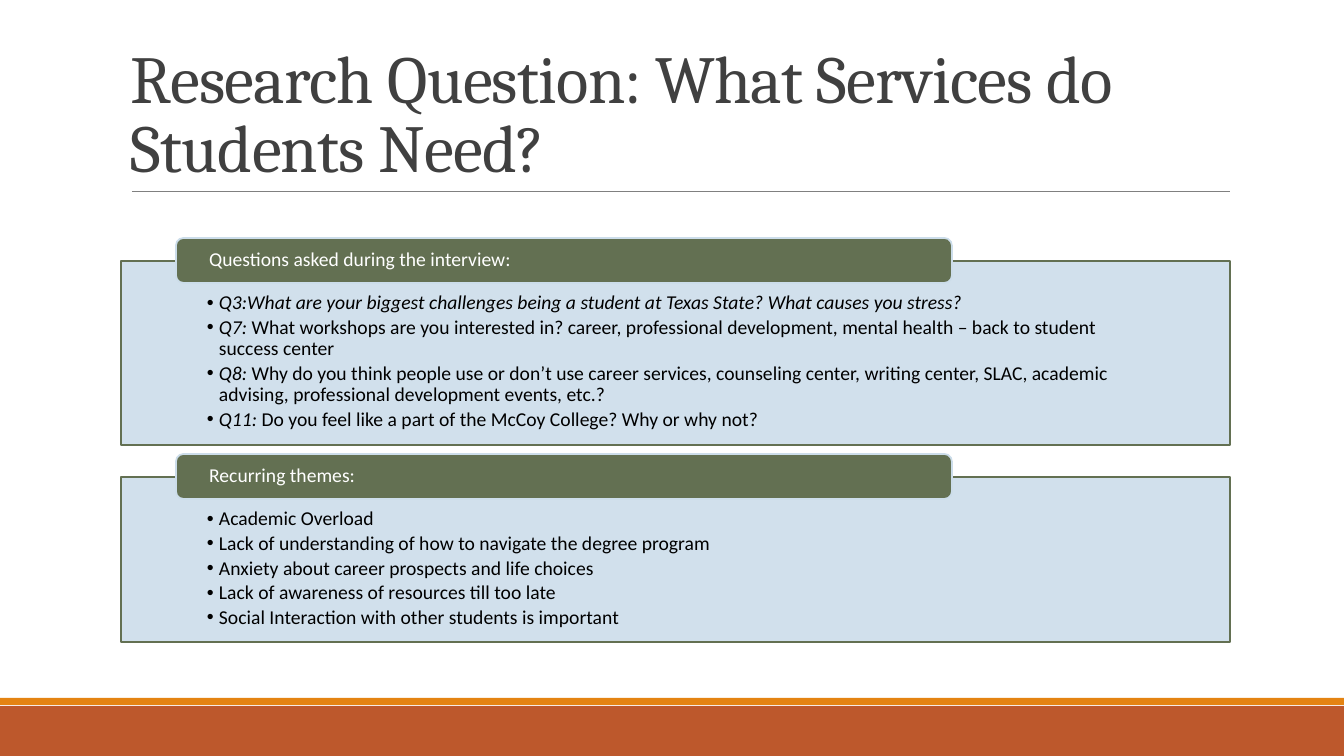
from lxml import etree
from pptx import Presentation
from pptx.dml.color import RGBColor
from pptx.enum.shapes import MSO_CONNECTOR, MSO_SHAPE
from pptx.enum.text import MSO_ANCHOR, MSO_AUTO_SIZE, PP_ALIGN
from pptx.oxml.ns import qn
from pptx.util import Pt

RECT, ROUND = MSO_SHAPE.RECTANGLE, MSO_SHAPE.ROUNDED_RECTANGLE
TOP, MIDDLE, BOTTOM = MSO_ANCHOR.TOP, MSO_ANCHOR.MIDDLE, MSO_ANCHOR.BOTTOM
LEFT, STRAIGHT = PP_ALIGN.LEFT, MSO_CONNECTOR.STRAIGHT

TITLE = "Research Question: What Services do Students Need?"
# Each panel: heading, top, height, items; an item is a list of (text, italic)
PANELS = [
    ("Questions asked during the interview:", 261, 184, [
        [("Q3:What are your biggest challenges being a student at Texas State? "
          "What causes you stress?", True)],
        [("Q7: ", True),
         ("What workshops are you interested in? career, professional development, "
          "mental health – back to student success center", False)],
        [("Q8: ", True),
         ("Why do you think people use or don’t use career services, counseling center, "
          "writing center, SLAC, academic advising, professional development events, etc.?",
          False)],
        [("Q11: ", True),
         ("Do you feel like a part of the McCoy College? Why or why not?", False)],
    ]),
    ("Recurring themes:", 477, 165, [
        [("Academic Overload", False)],
        [("Lack of understanding of how to navigate the degree program", False)],
        [("Anxiety about career prospects and life choices", False)],
        [("Lack of awareness of resources till too late", False)],
        [("Social Interaction with other students is important", False)],
    ]),
]
COLORS = {"rust": "BD582C", "orange": "E48312", "rule": "808080", "title": "404040",
          "panel": "CCDDEA", "green": "637052", "black": "000000", "white": "FFFFFF"}
WIDE, HIGH = 1344, 756
EDGE, SPAN = 121, 1109
TAB_X, TAB_W, TAB_H, TAB_RISE = 176, 776, 45, 23
HANG = 12


def px(n):
    return round(n * 914400 / 100.8)


def color(name):
    return RGBColor.from_string(COLORS[name])


def place(shape, *box):
    shape.left, shape.top, shape.width, shape.height = map(px, box)


def paint(shape, fill, line=None):
    shape.fill.solid()
    shape.fill.fore_color.rgb = color(fill)
    if line:
        shape.line.color.rgb = color(line)
        shape.line.width = Pt(1.25)
    else:
        shape.line.fill.background()


def add_box(kind, box, fill, line=None):
    shape = slide.shapes.add_shape(kind, *map(px, box))
    shape.shadow.inherit = False
    paint(shape, fill, line)
    return shape


def set_frame(shape, anchor, *insets):
    frame = shape.text_frame
    frame.word_wrap = True
    frame.auto_size = MSO_AUTO_SIZE.NONE
    frame.vertical_anchor = anchor
    (frame.margin_left, frame.margin_top,
     frame.margin_right, frame.margin_bottom) = map(px, insets)
    return frame


def set_para(para, spacing, after=0):
    para.alignment = LEFT
    para.line_spacing = spacing
    para.space_before = Pt(0)
    para.space_after = Pt(after)


def add_run(para, text, size, font, tone, italic=False):
    run = para.add_run()
    run.text = text
    run.font.size, run.font.name, run.font.italic = Pt(size), font, italic
    run.font.color.rgb = color(tone)
    return run


def add_bullet(para):
    props = para._p.get_or_add_pPr()
    props.set("marL", str(px(HANG)))
    props.set("indent", str(-px(HANG)))
    etree.SubElement(props, qn("a:buFont")).set("typeface", "Arial")
    etree.SubElement(props, qn("a:buChar")).set("char", "•")


def fill_panel(panel, top, height, items):
    place(panel, EDGE, top, SPAN, height)
    paint(panel, "panel", "green")
    tint = panel._element.spPr.find(qn("a:solidFill"))[0]
    etree.SubElement(tint, qn("a:alpha")).set("val", "90000")
    frame = set_frame(panel, TOP, 86, 32, 86, 11)
    for i, item in enumerate(items):
        para = frame.add_paragraph() if i else frame.paragraphs[0]
        set_para(para, 0.9, 2.5)
        add_bullet(para)
        for text, italic in item:
            add_run(para, text, 14, "Calibri", "black", italic)


def add_tab(head, top):
    tab = add_box(ROUND, (TAB_X, top - TAB_RISE, TAB_W, TAB_H), "green", "panel")
    para = set_frame(tab, MIDDLE, 31, 0, 31, 0).paragraphs[0]
    set_para(para, 0.9)
    add_run(para, head, 14, "Calibri", "white")


deck = Presentation()
deck.slide_width, deck.slide_height = px(WIDE), px(HIGH)
slide = deck.slides.add_slide(deck.slide_layouts.get_by_name("Two Content"))
title, *bodies = slide.placeholders

add_box(RECT, (0, 706, WIDE, 50), "rust")
add_box(RECT, (0, 698, WIDE, 7), "orange")
rule = slide.shapes.add_connector(STRAIGHT, px(132), px(191), px(1230), px(191))
rule.line.color.rgb = color("rule")
rule.line.width = Pt(0.5)
etree.SubElement(rule._element.spPr, qn("a:effectLst"))

place(title, EDGE, 31, SPAN, 160)
para = set_frame(title, BOTTOM, 10, 5, 10, 5).paragraphs[0]
set_para(para, 0.85)
run = add_run(para, TITLE, 48, "Cambria", "title")
run.font._element.set("spc", "-50")

for body, (head, top, height, items) in zip(bodies, PANELS):
    fill_panel(body, top, height, items)
    add_tab(head, top)

deck.save("out.pptx")
